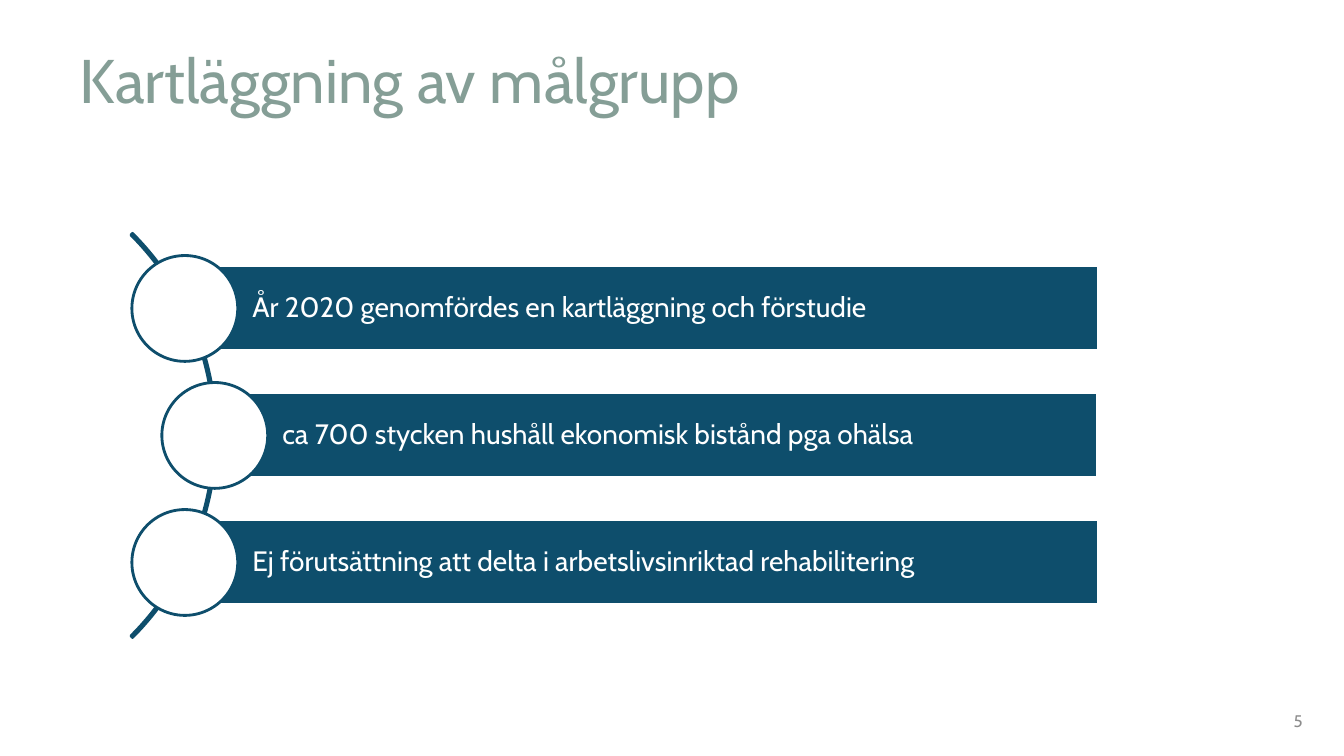
"""Build a slide with three statements strung along an arc."""
from math import sqrt

from pptx import Presentation
from pptx.dml.color import RGBColor
from pptx.enum.shapes import MSO_SHAPE
from pptx.enum.text import MSO_ANCHOR, MSO_AUTO_SIZE, PP_ALIGN
from pptx.util import Inches, Pt

ARC, BAR, CIRCLE = MSO_SHAPE.BLOCK_ARC, MSO_SHAPE.RECTANGLE, MSO_SHAPE.OVAL
LEFT, RIGHT = PP_ALIGN.LEFT, PP_ALIGN.RIGHT
MIDDLE, BOTTOM = MSO_ANCHOR.MIDDLE, MSO_ANCHOR.BOTTOM
NO_FIT = MSO_AUTO_SIZE.NONE

FONT = "Cabin"
NAVY = RGBColor(0x0E, 0x4E, 0x6C)
SAGE = RGBColor(0x85, 0x9E, 0x96)
GREY = RGBColor(0x8C, 0x8C, 0x8C)
WHITE = RGBColor(0xFF, 0xFF, 0xFF)

WIDTH, HEIGHT = 13.33, 7.5
TITLE_ONLY = 5
ARC_X, ARC_Y, ARC_SIZE = -0.69, 4.32, 5.67
TRACK_RADIUS = 2.82
ROW_PITCH = 1.26
BAR_RIGHT, BAR_HEIGHT = 10.89, 0.84
CIRCLE_SIZE = 1.05
STATEMENTS = [
    "År 2020 genomfördes en kartläggning och förstudie",
    "ca 700 stycken hushåll ekonomisk bistånd pga ohälsa",
    "Ej förutsättning att delta i arbetslivsinriktad rehabilitering",
]


def place(shape, left, top, width, height):
    """Move and size a shape, in inches."""
    shape.left, shape.top = Inches(left), Inches(top)
    shape.width, shape.height = Inches(width), Inches(height)


def write(shape, text, size, color, anchor=MIDDLE, align=LEFT, spacing=None):
    """Write one formatted paragraph into a shape."""
    tf = shape.text_frame
    tf.word_wrap = True
    tf.auto_size = NO_FIT
    tf.vertical_anchor = anchor
    p = tf.paragraphs[0]
    p.alignment = align
    p.line_spacing = spacing
    r = p.add_run()
    r.text = text
    r.font.name, r.font.size = FONT, Pt(size)
    r.font.color.rgb = color


def add_title(s, text):
    """Fill the title placeholder."""
    place(s.shapes.title, 0.69, 0.32, 10.25, 0.89)
    write(s.shapes.title, text, 44, SAGE, anchor=BOTTOM, spacing=0.9)


def add_page_number(s, number):
    """Add the page number at the bottom right."""
    sp = s.shapes.add_textbox(0, 0, 0, 0)
    place(sp, 10.02, 6.95, 3, 0.4)
    write(sp, str(number), 12, GREY, align=RIGHT)


def add_outlined(s, kind, box, line, fill=None):
    """Add a flat shape with a two-point outline."""
    sp = s.shapes.add_shape(kind, *(Inches(v) for v in box))
    sp.shadow.inherit = False
    if fill is None:
        sp.fill.background()
    else:
        sp.fill.solid()
        sp.fill.fore_color.rgb = fill
    sp.line.color.rgb = line
    sp.line.width = Pt(2)
    return sp


def add_arc(s):
    """Add the thin arc that joins the circles."""
    half = ARC_SIZE / 2
    sp = add_outlined(s, ARC, (ARC_X - half, ARC_Y - half, ARC_SIZE, ARC_SIZE), NAVY)
    for i, value in enumerate((189, 27, 0.004)):
        sp.adjustments[i] = value


def add_statement(s, text, offset):
    """Add a bar and its circle on the arc, offset from the arc's middle."""
    x = ARC_X + sqrt(TRACK_RADIUS ** 2 - offset ** 2)
    y = ARC_Y + offset
    bar = add_outlined(
        s, BAR, (x, y - BAR_HEIGHT / 2, BAR_RIGHT - x, BAR_HEIGHT), WHITE, NAVY)
    tf = bar.text_frame
    tf.margin_left = Inches(0.67)
    tf.margin_top = tf.margin_right = tf.margin_bottom = Inches(0.06)
    write(bar, text, 20, WHITE, spacing=0.9)
    half = CIRCLE_SIZE / 2
    add_outlined(s, CIRCLE, (x - half, y - half, CIRCLE_SIZE, CIRCLE_SIZE), NAVY, WHITE)


def main():
    """Build and save the slide."""
    prs = Presentation()
    prs.slide_width, prs.slide_height = Inches(WIDTH), Inches(HEIGHT)
    s = prs.slides.add_slide(prs.slide_layouts[TITLE_ONLY])
    add_title(s, "Kartläggning av målgrupp")
    add_page_number(s, 5)
    add_arc(s)
    middle = (len(STATEMENTS) - 1) / 2
    for i, text in enumerate(STATEMENTS):
        add_statement(s, text, (i - middle) * ROW_PITCH)
    prs.save("out.pptx")


if __name__ == "__main__":
    main()
